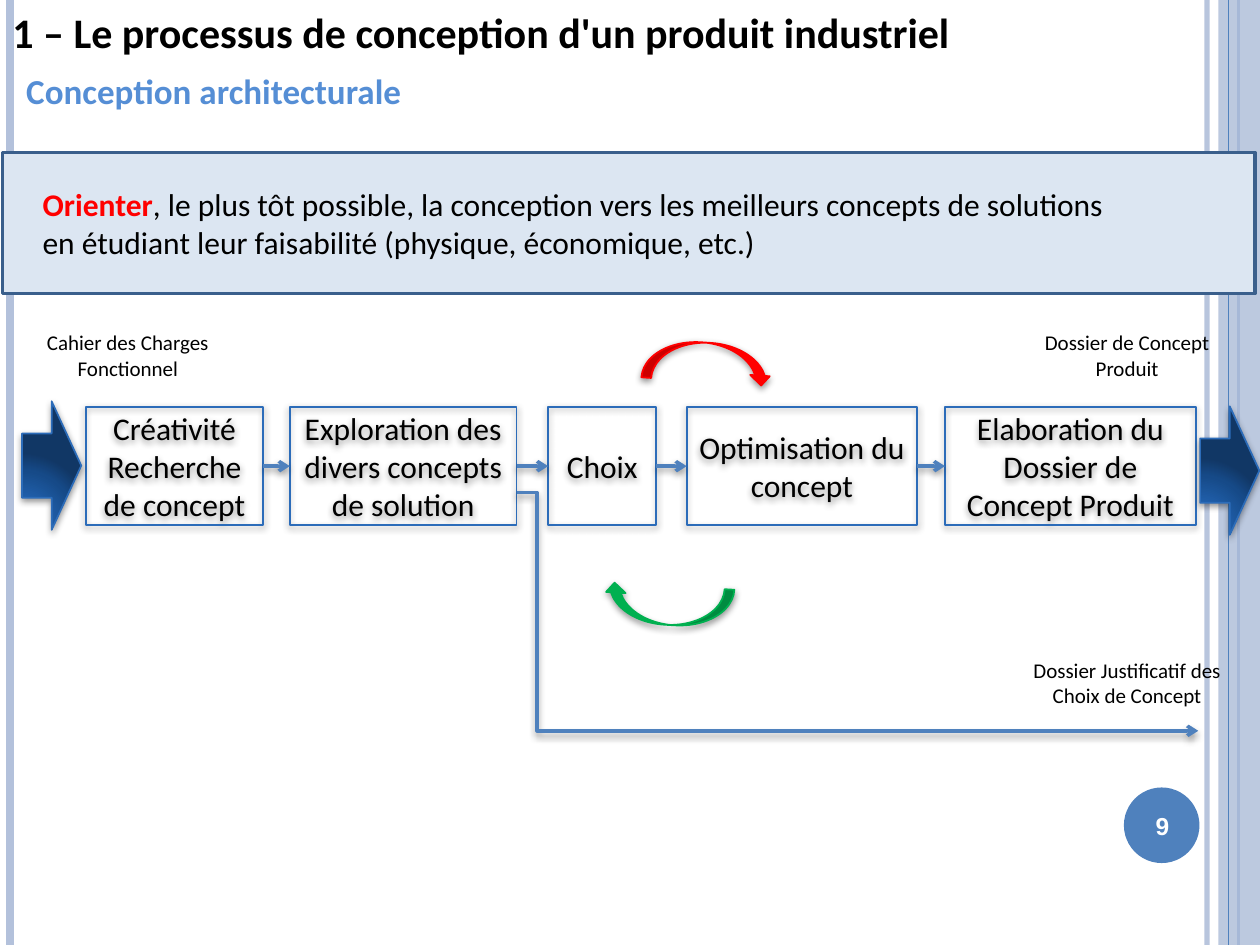
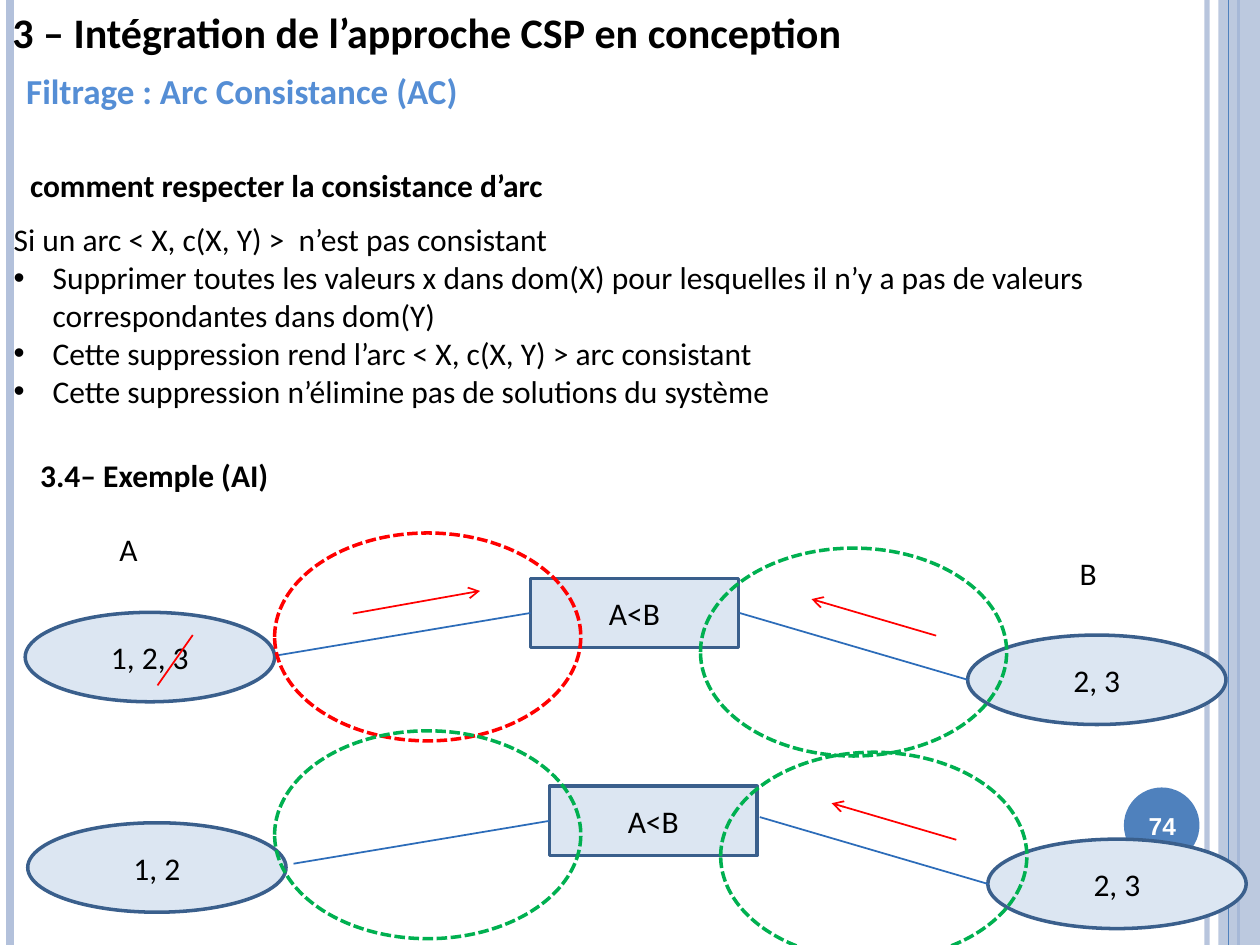
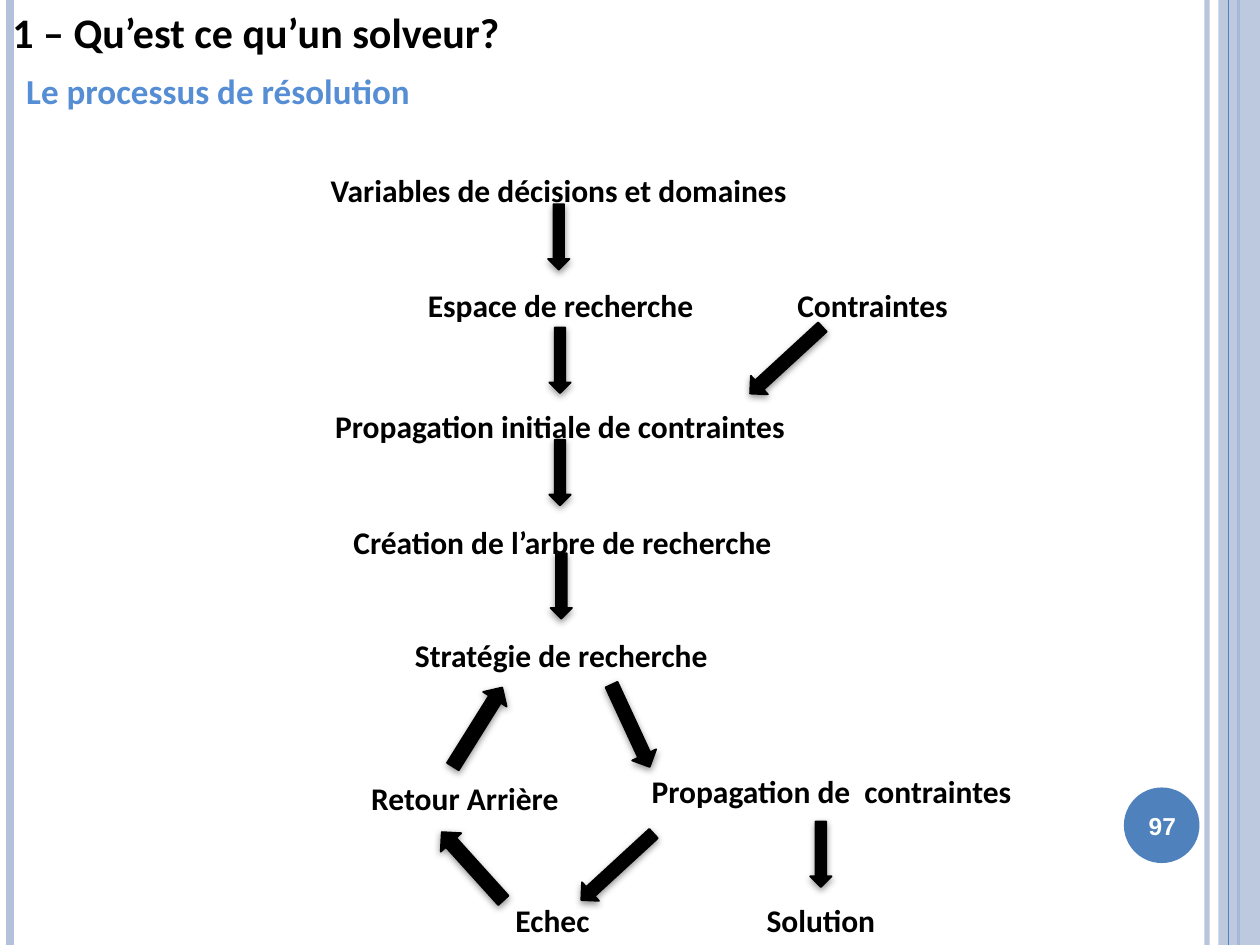
import dataclasses
import lxml.etree
import pptx
import pptx.dml.color
import pptx.enum.dml
import pptx.enum.shapes
import pptx.enum.text
import pptx.oxml.ns
import pptx.util

COLUMNS, ROWS = 10, 7.5
SHAPES = pptx.enum.shapes.MSO_SHAPE
LINKS = pptx.enum.shapes.MSO_CONNECTOR
ALIGN = pptx.enum.text.PP_ALIGN
ANCHOR = pptx.enum.text.MSO_ANCHOR


@dataclasses.dataclass(frozen=True)
class Theme:
    font: str = "Calibri"
    number_font: str = "Arial"
    black: str = "000000"
    white: str = "FFFFFF"
    red: str = "FF0000"
    green: str = "00B050"
    subtitle: str = "558ED5"
    accent: str = "4F81BD"
    band: str = "B3C1DB"
    panel: str = "DCE6F2"
    panel_line: str = "3A5F8C"
    step_line: str = "2C6CB9"
    title_size: int = 24
    subtitle_size: int = 20
    body_size: int = 18
    number_size: int = 14
    label_size: int = 12


THEME = Theme()
SHAPE_SHADOW = (42, 4, 1.6)
LINK_SHADOW = (40, 4, 2)
ARROW_STOPS = ((0, "2367B8"), (30, "2263B1"), (75, "164A88"), (100, "113765"))
ARROW_FOCUS = {"l": 5, "t": 100, "r": 120, "b": 10}

DESIGN = {
    "number": "9",
    "title": "1 – Le processus de conception d'un produit industriel",
    "subtitle": "Conception architecturale",
    "goal": [
        ("Orienter", THEME.red, True),
        (", le plus tôt possible, la conception vers les meilleurs concepts de solutions "
         "en étudiant leur faisabilité (physique, économique, etc.)", THEME.black, False),
    ],
    "steps": [
        ("Créativité Recherche de concept", 0.68, 1.41),
        ("Exploration des divers concepts de solution", 2.3, 1.8),
        ("Choix", 4.35, 0.86),
        ("Optimisation du concept", 5.45, 1.83),
        ("Elaboration du Dossier de Concept Produit", 7.5, 1.99),
    ],
    "labels": [
        ("Cahier des Charges Fonctionnel", 0.03, 2.57, 1.97),
        ("Dossier de Concept Produit", 7.99, 2.57, 1.91),
        ("Dossier Justificatif des Choix de Concept", 7.99, 5.17, 1.91),
    ],
    "flow_arrows": [(-0.1, 3.46), (9.25, 3.5)],
    "loops": [(5.1, 2.72, 3.9, THEME.red), (4.79, 4.65, 183.4, THEME.green)],
}

FILTERING = {
    "number": "74",
    "title": "3 – Intégration de l’approche CSP en conception",
    "subtitle": "Filtrage : Arc Consistance (AC)",
    "headings": [
        ("comment respecter la consistance d’arc", 0.14, 1.27, 4.3),
        ("3.4– Exemple (AI)", 0.22, 3.57, 2.03),
    ],
    "rule": "Si un arc < X, c(X, Y) >  n’est pas consistant",
    "bullets": [
        "Supprimer toutes les valeurs x dans dom(X) pour lesquelles il n’y a pas de valeurs "
        "correspondantes dans dom(Y)",
        "Cette suppression rend l’arc < X, c(X, Y) > arc consistant",
        "Cette suppression n’élimine pas de solutions du système",
    ],
    "variables": [("A", 0.85, 4.16), ("B", 8.47, 4.35)],
    "constraint": "A<B",
    "networks": [
        {"a": ("1, 2, 3", 0.2, 4.86, 1.98), "box": (4.21, 4.59), "b": ("2, 3", 7.68, 5.04),
         "ring": (4.23, THEME.red)},
        {"a": ("1, 2", 0.22, 6.53, 2.05), "box": (4.36, 6.24), "b": ("2, 3", 7.84, 6.66),
         "ring": (5.8, THEME.green)},
    ],
    "check": ((2.8, 4.87), (3.81, 4.69)),
    "strike": ((1.25, 5.44), (1.53, 5.04)),
}

SOLVER = {
    "number": "97",
    "title": "1 – Qu’est ce qu’un solveur?",
    "subtitle": "Le processus de résolution",
    "stages": [
        ("Variables de décisions et domaines", 2.14, 1.31, 4.59),
        ("Espace de recherche", 3.23, 2.22, 2.44),
        ("Propagation initiale de contraintes", 2.15, 3.18, 4.59),
        ("Création de l’arbre de recherche", 2.17, 4.1, 4.59),
        ("Contraintes", 5.67, 2.22, 2.51),
        ("Stratégie de recherche", 2.16, 5, 4.59),
        ("Retour Arrière", 2.74, 6.13, 1.9),
        ("Echec", 3.68, 7.1, 1.41),
        ("Propagation de  contraintes", 4.9, 6.08, 3.4),
        ("Solution", 5.81, 7.1, 1.41),
    ],
    "down_arrows": [(4.35, 1.62), (4.36, 2.6), (4.36, 3.49), (4.37, 4.39), (6.43, 6.52)],
    "turned_arrows": [
        (4.9, 5.4, 0.21, 0.72, 335.1),
        (3.68, 5.4, 0.22, 0.74, 212),
        (4.8, 6.49, 0.2, 0.78, 47.4),
        (3.64, 6.51, 0.22, 0.73, 137.9),
        (6.14, 2.47, 0.2, 0.78, 47.4),
    ],
}


def grid(*cells):
    return [pptx.util.Inches(cell) for cell in cells]


def rgb(color):
    return pptx.dml.color.RGBColor.from_string(color)


def child(parent, tag, **values):
    element = lxml.etree.SubElement(parent, pptx.oxml.ns.qn("a:" + tag))
    for name, value in values.items():
        element.set(name, str(value))
    return element


def set_alpha(properties, percent):
    for color in properties.iter(pptx.oxml.ns.qn("a:srgbClr")):
        child(color, "alpha", val=percent * 1000)


def set_effects(properties, shadow):
    effects = properties.find(pptx.oxml.ns.qn("a:effectLst"))
    if effects is None:
        effects = child(properties, "effectLst")
    if shadow:
        alpha, blur, distance = shadow
        outer = child(effects, "outerShdw", blurRad=pptx.util.Pt(blur), dist=pptx.util.Pt(distance),
                      dir=90 * 60000, algn="ctr", rotWithShape=0)
        child(child(outer, "srgbClr", val=THEME.black), "alpha", val=alpha * 1000)


def set_outline(line, color, width, dashed=False):
    line.color.rgb = rgb(color)
    line.width = pptx.util.Pt(width)
    if dashed:
        line.dash_style = pptx.enum.dml.MSO_LINE.SQUARE_DOT


def write(para, runs, size, font=THEME.font):
    for text, color, bold in runs:
        span = para.add_run()
        span.text = text
        span.font.name = font
        span.font.size = pptx.util.Pt(size)
        span.font.bold = bold
        span.font.color.rgb = rgb(color)


def add_box(page, text, left, top, width, height=0.4, size=THEME.body_size, color=THEME.black,
            bold=False, align=ALIGN.LEFT, wrap=True, font=THEME.font, anchor=ANCHOR.TOP):
    box = page.shapes.add_textbox(*grid(left, top, width, height))
    box.text_frame.word_wrap = wrap
    box.text_frame.vertical_anchor = anchor
    para = box.text_frame.paragraphs[0]
    para.alignment = align
    runs = [(text, color, bold)] if isinstance(text, str) else text
    write(para, runs, size, font)
    return box


def add_shape(page, kind, left, top, width, height, fill=None, line=None, line_width=1,
              dashed=False, shadow=None, turn=0, text=None):
    shape = page.shapes.add_shape(kind, *grid(left, top, width, height))
    shape.rotation = turn
    if fill:
        shape.fill.solid()
        shape.fill.fore_color.rgb = rgb(fill)
    else:
        shape.fill.background()
    if line:
        set_outline(shape.line, line, line_width, dashed)
    else:
        shape.line.fill.background()
    shape.shadow.inherit = False
    set_effects(shape._element.spPr, shadow)
    if text:
        shape.text_frame.word_wrap = True
        shape.text_frame.vertical_anchor = ANCHOR.MIDDLE
        para = shape.text_frame.paragraphs[0]
        para.alignment = ALIGN.CENTER
        write(para, [(text, THEME.black, False)], THEME.body_size)
    return shape


def add_panel(page, kind, left, top, width, height, text=None):
    return add_shape(page, kind, left, top, width, height, THEME.panel, THEME.panel_line, 2, text=text)


def add_link(page, start, end, color, width=1, arrow=False, shadow=None, bend=None):
    kind = LINKS.STRAIGHT if bend is None else LINKS.ELBOW
    link = page.shapes.add_connector(kind, *grid(*start, *end))
    set_outline(link.line, color, width)
    properties = link._element.spPr
    if arrow:
        child(link.line._get_or_add_ln(), "tailEnd", type="arrow")
    if bend is not None:
        guides = properties.find(".//" + pptx.oxml.ns.qn("a:avLst"))
        child(guides, "gd", name="adj1", fmla=f"val {round(bend * 100000)}")
    set_effects(properties, shadow)
    return link


def shade_arrow(shape):
    shape.fill.gradient()
    gradient = shape._element.spPr.find(pptx.oxml.ns.qn("a:gradFill"))
    for part in list(gradient):
        gradient.remove(part)
    stops = child(gradient, "gsLst")
    for position, color in ARROW_STOPS:
        child(child(stops, "gs", pos=position * 1000), "srgbClr", val=color)
    circle = child(gradient, "path", path="circle")
    child(circle, "fillToRect", **{side: share * 1000 for side, share in ARROW_FOCUS.items()})


def add_page(deck, content):
    page = deck.slides.add_slide(deck.slide_layouts[6])

    def rule(x, color, width):
        return add_link(page, (x, 0), (x, ROWS), color, width)

    set_alpha(rule(9.58, THEME.band, 3)._element.spPr.find(pptx.oxml.ns.qn("a:ln")), 93)
    rule(0.08, THEME.band, 4.5)
    rule(9.83, THEME.accent, 1.5)
    side = add_shape(page, SHAPES.RECTANGLE, 9.67, 0, 0.33, ROWS, THEME.band)
    set_alpha(side._element.spPr, 87)
    rule(9.75, THEME.accent, 0.75)
    add_shape(page, SHAPES.OVAL, 8.92, 6.25, 0.6, 0.6, THEME.accent)
    add_box(page, content["title"], 0, 0, 7.71, 0.5, THEME.title_size, bold=True, wrap=False)
    add_box(page, content["subtitle"], 0.11, 0.5, 3.65, 0.44, THEME.subtitle_size,
            THEME.subtitle, True, wrap=False)
    return page


def add_number(page, content):
    add_box(page, content["number"], 8.89, 6.27, 0.67, 0.57, THEME.number_size, THEME.white, True,
            ALIGN.CENTER, font=THEME.number_font, anchor=ANCHOR.MIDDLE)


def build_design(deck):
    page = add_page(deck, DESIGN)
    add_panel(page, SHAPES.RECTANGLE, 0.02, 1.21, 9.94, 1.12)
    add_box(page, DESIGN["goal"], 0.24, 1.42, 8.9, 0.71)
    steps = DESIGN["steps"]
    for text, left, width in steps:
        add_shape(page, SHAPES.RECTANGLE, left, 3.23, width, 0.94, line=THEME.step_line,
                  shadow=SHAPE_SHADOW, text=text)
    for text, left, top, width in DESIGN["labels"]:
        add_box(page, text, left, top, width, 0.5, THEME.label_size, align=ALIGN.CENTER)
    for left, top in DESIGN["flow_arrows"]:
        shade_arrow(add_shape(page, SHAPES.DOWN_ARROW, left, top, 1.02, 0.47,
                              line=THEME.step_line, shadow=SHAPE_SHADOW, turn=270))
    ends = [left + width for _, left, width in steps]
    routes = [((end, 3.7), (step[1], 3.7), 0.5) for end, step in zip(ends, steps[1:])]
    routes.append(((ends[1], 3.91), (9.51, 5.8), 0.03))
    for start, end, bend in routes:
        add_link(page, start, end, THEME.accent, 2, True, LINK_SHADOW, bend)
    for left, top, turn, color in DESIGN["loops"]:
        add_shape(page, SHAPES.CURVED_DOWN_ARROW, left, top, 1.03, 0.31, color, color,
                  shadow=SHAPE_SHADOW, turn=turn)
    add_number(page, DESIGN)


def add_network(page, network):
    text_a, a_left, a_top, a_width = network["a"]
    text_b, b_left, b_top = network["b"]
    box_left, box_top = network["box"]
    ring_top, ring_color = network["ring"]
    height, box_height = 0.71, 0.55
    add_panel(page, SHAPES.OVAL, a_left, a_top, a_width, height, text_a)
    add_panel(page, SHAPES.OVAL, b_left, b_top, 2.05, height, text_b)
    add_panel(page, SHAPES.RECTANGLE, box_left, box_top, 1.65, box_height, FILTERING["constraint"])
    box_middle, b_middle = box_top + box_height / 2, b_top + height / 2
    add_link(page, (box_left - 2.03, box_middle + 0.34), (box_left, box_middle), THEME.step_line)
    add_link(page, (b_left, b_middle), (b_left - 1.81, b_middle - 0.53), THEME.step_line)
    add_link(page, (b_left - 0.25, b_middle - 0.35), (b_left - 1.24, b_middle - 0.64),
             THEME.red, arrow=True)
    for left, top, color in ((2.18, ring_top, ring_color),
                             (b_left - 2.12, b_top - 0.69, THEME.green)):
        add_shape(page, SHAPES.OVAL, left, top, 2.43, 1.65, line=color, line_width=2, dashed=True)


def build_filtering(deck):
    page = add_page(deck, FILTERING)
    for text, left, top, width in FILTERING["headings"]:
        add_box(page, text, left, top, width, bold=True, wrap=False)
    body = add_box(page, FILTERING["rule"], 0.01, 1.7, 8.81, 1.92)
    for text in FILTERING["bullets"]:
        para = body.text_frame.add_paragraph()
        write(para, [(text, THEME.black, False)], THEME.body_size)
        properties = para._p.get_or_add_pPr()
        indent = pptx.util.Inches(0.31)
        properties.set("marL", str(indent))
        properties.set("indent", str(-indent))
        child(properties, "buFont", typeface=THEME.number_font)
        child(properties, "buChar", char="•")
    for text, left, top in FILTERING["variables"]:
        add_box(page, text, left, top, 0.53)
    for network in FILTERING["networks"]:
        add_network(page, network)
    add_link(page, *FILTERING["check"], THEME.red, arrow=True)
    add_link(page, *FILTERING["strike"], THEME.red)
    add_number(page, FILTERING)


def build_solver(deck):
    page = add_page(deck, SOLVER)
    for text, left, top, width in SOLVER["stages"]:
        add_box(page, text, left, top, width, bold=True, align=ALIGN.CENTER)
    arrows = [(left, top, 0.17, 0.52, 0) for left, top in SOLVER["down_arrows"]]
    for left, top, width, height, turn in arrows + SOLVER["turned_arrows"]:
        add_shape(page, SHAPES.DOWN_ARROW, left, top, width, height, THEME.black, THEME.black,
                  shadow=SHAPE_SHADOW, turn=turn)
    add_number(page, SOLVER)


def main():
    deck = pptx.Presentation()
    deck.slide_width, deck.slide_height = grid(COLUMNS, ROWS)
    build_design(deck)
    build_filtering(deck)
    build_solver(deck)
    deck.save("out.pptx")


if __name__ == "__main__":
    main()
